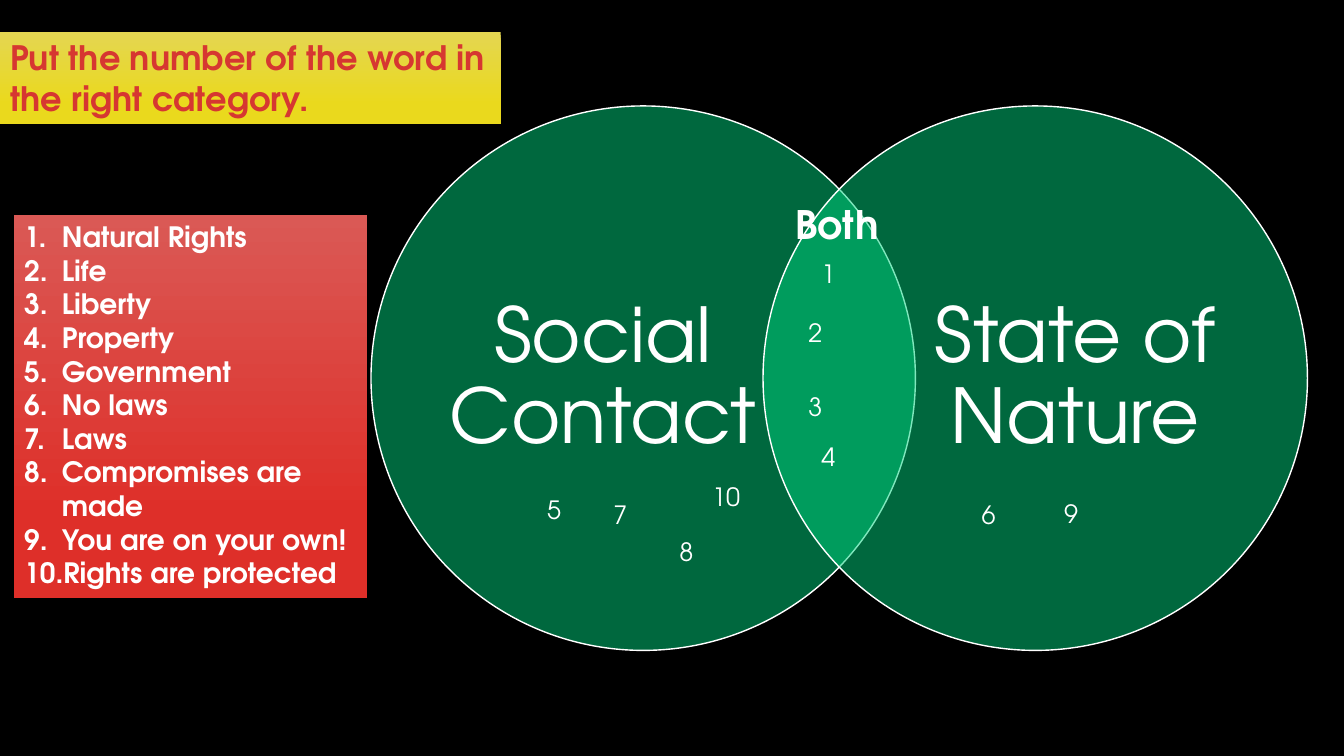
from lxml import etree
from pptx import Presentation
from pptx import util as u
from pptx.dml.color import RGBColor
from pptx.enum import shapes, text
from pptx.oxml import ns

COLORS = {
    "background": "000000",
    "text": "FFFFFF",
    "circle": "01D17D",
    "title": "D63731",
    "title_top": "E4D651",
    "title_bottom": "EAD91D",
    "list_top": "DA5955",
    "list_bottom": "DE2F29",
}
FONT = "TeX Gyre Adventor"

WORDS = [
    "Natural Rights", "Life", "Liberty", "Property", "Government", "No laws",
    "Laws", "Compromises are made", "You are on your own!", "Rights are protected",
]
CIRCLES = [("Social Contact", 9.35, 11.25), ("State of Nature", 19.23, 23.14)]
ANSWERS = {
    1: (20.45, 6.38), 2: (20.12, 7.87), 3: (20.12, 9.73), 4: (20.45, 11),
    5: (13.54, 12.34), 6: (24.49, 12.45), 7: (15.21, 12.45), 8: (16.87, 13.39),
    9: (26.57, 12.42), 10: (17.7, 12.01),
}


def color(name):
    return RGBColor.from_string(COLORS[name])


def write(paragraph, words, size=18, bold=False, ink="text", align=text.PP_ALIGN.LEFT, spacing=1.0):
    paragraph.alignment = align
    paragraph.line_spacing = spacing
    run = paragraph.add_run()
    run.text = words
    run.font.name = FONT
    run.font.size = u.Pt(size)
    run.font.bold = bold
    run.font.color.rgb = color(ink)


class VennSlide:
    def __init__(self, presentation):
        self.slide = presentation.slides.add_slide(presentation.slide_layouts[5])
        self.slide.background.fill.solid()
        self.slide.background.fill.fore_color.rgb = color("background")

    def shade(self, shape, top, bottom):
        shape.fill.gradient()
        shape.fill.gradient_angle = 270
        for stop, name, position in zip(shape.fill.gradient_stops, (top, bottom), (0, 0.78)):
            stop.color.rgb = color(name)
            stop.position = position

    def title(self, words, left, top, width, height):
        shape = self.slide.shapes.title
        shape.left, shape.top = u.Cm(left), u.Cm(top)
        shape.width, shape.height = u.Cm(width), u.Cm(height)
        self.shade(shape, "title_top", "title_bottom")
        frame = shape.text_frame
        frame.word_wrap = True
        frame.auto_size = text.MSO_AUTO_SIZE.NONE
        frame.vertical_anchor = text.MSO_ANCHOR.TOP
        write(frame.paragraphs[0], words, size=24, bold=True, ink="title")

    def shape(self, kind, left, top, width, height):
        shape = self.slide.shapes.add_shape(kind, u.Cm(left), u.Cm(top), u.Cm(width), u.Cm(height))
        shape.shadow.inherit = False
        return shape

    def circle(self, left, top, diameter):
        shape = self.shape(shapes.MSO_SHAPE.OVAL, left, top, diameter, diameter)
        shape.fill.solid()
        shape.fill.fore_color.rgb = color("circle")
        fill_color = shape.fill._xPr.find(ns.qn("a:solidFill"))[0]
        etree.SubElement(fill_color, ns.qn("a:alpha"), val="50000")
        shape.line.color.rgb = color("text")
        shape.line.width = u.Pt(1)

    def label(self, words, left, top, width, height, centered=False, **style):
        box = self.slide.shapes.add_textbox(u.Cm(left), u.Cm(top), u.Cm(width), u.Cm(height))
        frame = box.text_frame
        frame.word_wrap = True
        if centered:
            frame.vertical_anchor = text.MSO_ANCHOR.MIDDLE
            frame.margin_left = frame.margin_right = 0
            frame.margin_top = frame.margin_bottom = 0
            style["align"] = text.PP_ALIGN.CENTER
        write(frame.paragraphs[0], words, **style)

    def numbered_list(self, items, left, top, width, height):
        shape = self.shape(shapes.MSO_SHAPE.RECTANGLE, left, top, width, height)
        self.shade(shape, "list_top", "list_bottom")
        shape.line.fill.background()
        frame = shape.text_frame
        frame.word_wrap = True
        frame.vertical_anchor = text.MSO_ANCHOR.TOP
        for index, item in enumerate(items):
            paragraph = frame.add_paragraph() if index else frame.paragraphs[0]
            properties = paragraph._p.get_or_add_pPr()
            indent = u.Cm(0.95)
            properties.set("marL", str(indent))
            properties.set("indent", str(-indent))
            etree.SubElement(properties, ns.qn("a:buFont"), typeface=FONT)
            etree.SubElement(properties, ns.qn("a:buAutoNum"), type="arabicPeriod")
            write(paragraph, item, size=20, bold=True)


def main():
    presentation = Presentation()
    presentation.slide_width = u.Cm(33.87)
    presentation.slide_height = u.Cm(19.05)
    venn = VennSlide(presentation)
    venn.title("Put the number of the word in the right category.", 0, 0.81, 12.62, 2.31)
    for name, circle_left, name_left in CIRCLES:
        venn.circle(circle_left, 2.67, 13.72)
        venn.label(name, name_left, 4.29, 7.9, 10.49, centered=True, size=54, spacing=0.9)
    venn.label("Both", 19.79, 4.93, 3.99, 1.45, size=28, bold=True)
    venn.numbered_list(WORDS, 0.36, 5.41, 8.89, 9.65)
    for number, (left, top) in ANSWERS.items():
        venn.label(str(number), left, top, 1.65, 1.02)
    presentation.save("out.pptx")


if __name__ == "__main__":
    main()
